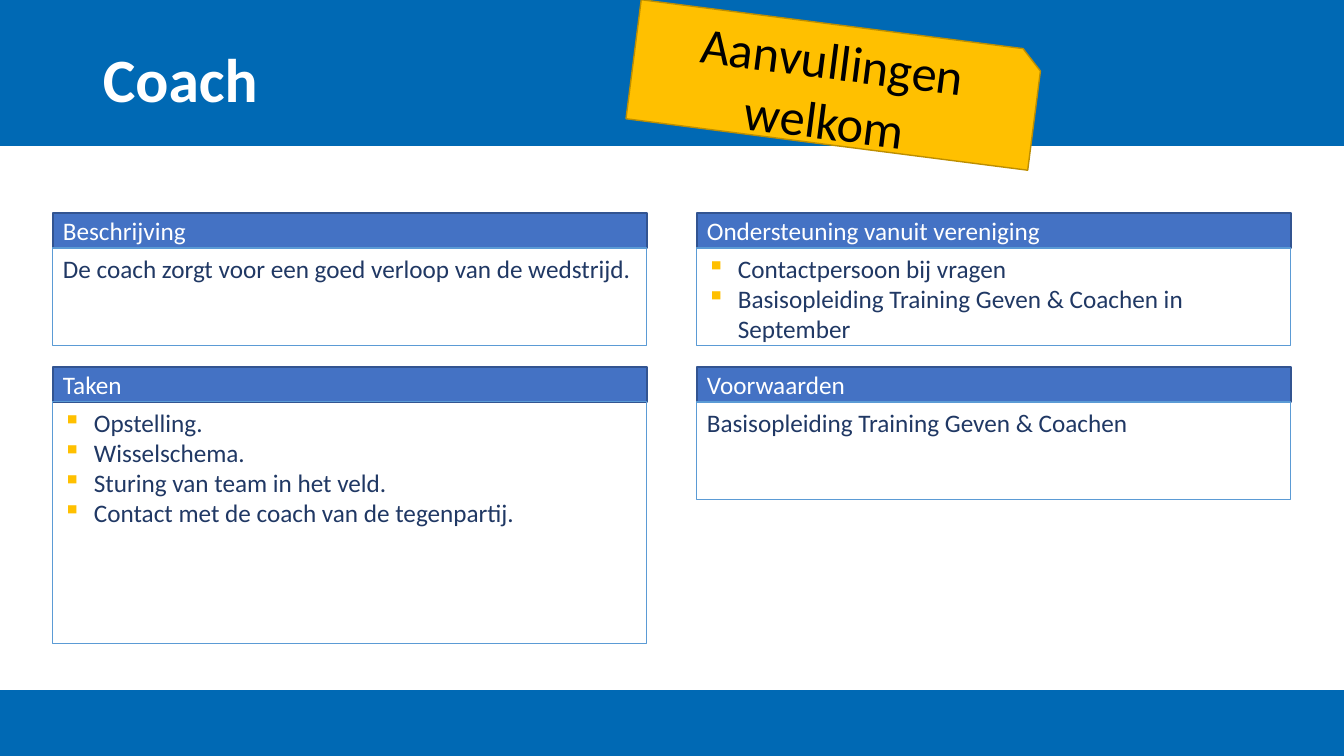
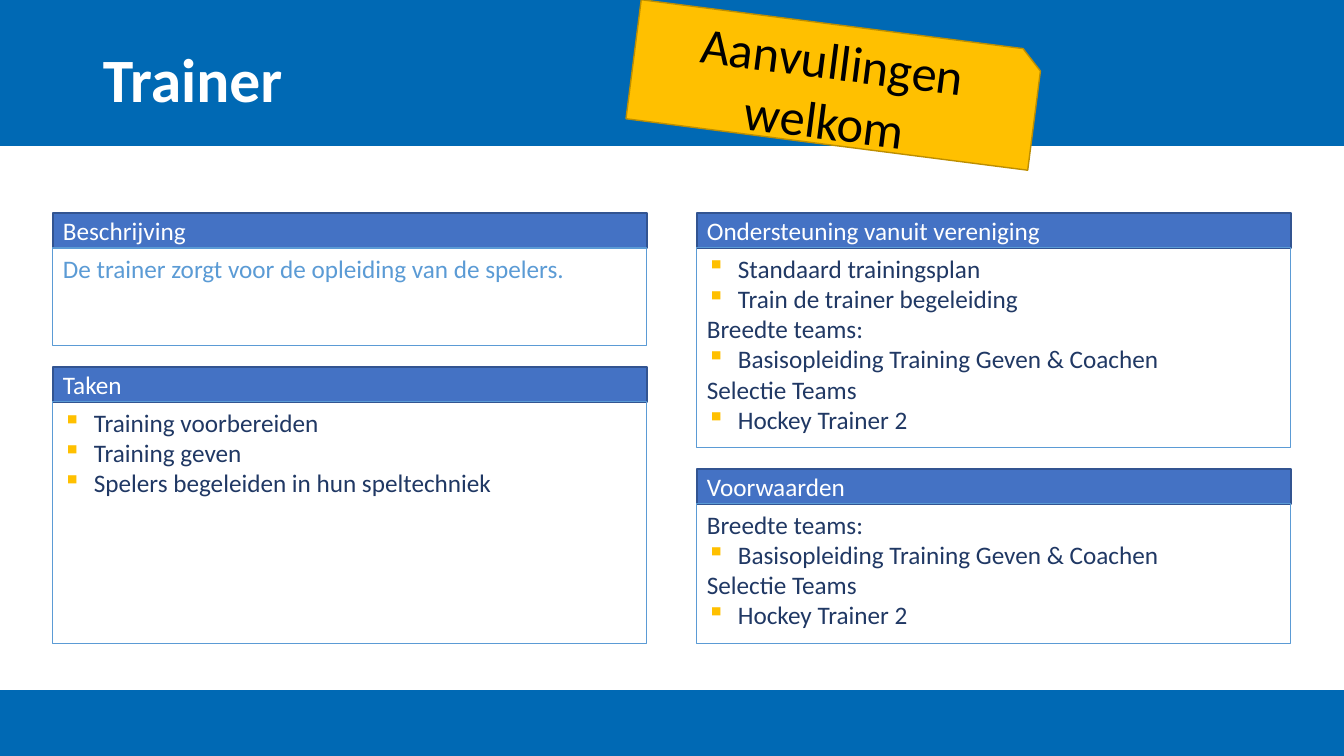
from collections import namedtuple
from dataclasses import dataclass

from lxml import etree
from pptx import Presentation
from pptx.dml.color import RGBColor
from pptx.enum.shapes import MSO_SHAPE
from pptx.enum.text import MSO_ANCHOR, PP_ALIGN
from pptx.oxml.ns import qn
from pptx.util import Emu, Pt

RECTANGLE = MSO_SHAPE.RECTANGLE
SNIPPED = MSO_SHAPE.SNIP_1_RECTANGLE
TOP, MIDDLE = MSO_ANCHOR.TOP, MSO_ANCHOR.MIDDLE
LEFT, CENTER = PP_ALIGN.LEFT, PP_ALIGN.CENTER

SLIDE_WIDTH, SLIDE_HEIGHT = 1344, 756
EMU_PER_PX = 12192000 / SLIDE_WIDTH

Box = namedtuple("Box", "left top width height")
Panel = namedtuple("Panel", "heading height lines color")


@dataclass(frozen=True)
class Theme:
    font: str = "Calibri"
    band: str = "0069B4"
    header: str = "4472C4"
    header_line: str = "325491"
    body_line: str = "5B9BD5"
    text: str = "203864"
    light_text: str = "5B9BD5"
    accent: str = "FFC000"
    accent_line: str = "BD8E00"
    white: str = "FFFFFF"
    black: str = "000000"
    title_size: int = 44
    badge_size: int = 36
    text_size: int = 18


THEME = Theme()
HEADER_BAND = Box(0, 0, SLIDE_WIDTH, 146)
FOOTER_BAND = Box(0, 690, SLIDE_WIDTH, 66)
TITLE_BOX = Box(93, 40, 1159, 86)
BADGE_BOX = Box(632, 25, 405, 120)
COLUMNS = (Box(53, 213, 594, 431), Box(697, 213, 594, 431))
PANEL_HEADER = 35
PANEL_GAP = 21
BULLET = "▪"
BULLET_INDENT = 31


def px(length):
    return Emu(round(length * EMU_PER_PX))


def rgb(value):
    return RGBColor.from_string(value)


def place(box):
    return [px(length) for length in box]


def add_box(slide, kind, box, fill=None, line=None, line_width=1):
    shape = slide.shapes.add_shape(kind, *place(box))
    shape.shadow.inherit = False
    if fill:
        shape.fill.solid()
        shape.fill.fore_color.rgb = rgb(fill)
    else:
        shape.fill.background()
    if line:
        shape.line.color.rgb = rgb(line)
        shape.line.width = Pt(line_width)
    else:
        shape.line.fill.background()
    return shape


def add_bullet(paragraph):
    properties = paragraph._p.get_or_add_pPr()
    indent = px(BULLET_INDENT)
    properties.set("marL", str(indent))
    properties.set("indent", str(-indent))
    color = etree.SubElement(properties, qn("a:buClr"))
    etree.SubElement(color, qn("a:srgbClr"), val=THEME.accent)
    etree.SubElement(properties, qn("a:buChar"), char=BULLET)


def write(shape, lines, size, color, anchor=MIDDLE, align=LEFT, bold=False):
    frame = shape.text_frame
    frame.word_wrap = True
    frame.vertical_anchor = anchor
    for index, line in enumerate(lines):
        paragraph = frame.paragraphs[0] if index == 0 else frame.add_paragraph()
        paragraph.alignment = align
        if line.startswith(BULLET):
            add_bullet(paragraph)
        run = paragraph.add_run()
        run.text = line.removeprefix(BULLET)
        run.font.name = THEME.font
        run.font.size = Pt(size)
        run.font.bold = bold
        run.font.color.rgb = rgb(color)


def add_frame(slide, title):
    for band in (HEADER_BAND, FOOTER_BAND):
        add_box(slide, RECTANGLE, band, THEME.band)
    title_box = slide.shapes.add_textbox(*place(TITLE_BOX))
    write(title_box, [title], THEME.title_size, THEME.white, bold=True)
    title_box.text_frame.paragraphs[0].line_spacing = 0.9


def add_badge(slide, box):
    badge = add_box(slide, SNIPPED, box, THEME.accent, THEME.accent_line)
    badge.rotation = 7.3
    write(badge, ["Aanvullingen welkom"], THEME.badge_size, THEME.black, align=CENTER)


def add_panel(slide, box, panel):
    header_box = box._replace(height=PANEL_HEADER)
    body_box = box._replace(top=box.top + PANEL_HEADER, height=box.height - PANEL_HEADER)
    header = add_box(slide, RECTANGLE, header_box, THEME.header, THEME.header_line)
    write(header, [panel.heading], THEME.text_size, THEME.white)
    body = add_box(slide, RECTANGLE, body_box, line=THEME.body_line, line_width=0.75)
    write(body, panel.lines, THEME.text_size, panel.color, anchor=TOP)


def add_column(slide, box, panels):
    top = box.top
    for panel in panels:
        add_panel(slide, box._replace(top=top, height=panel.height), panel)
        top += panel.height + PANEL_GAP


def add_role_slide(presentation, title, columns):
    slide = presentation.slides.add_slide(presentation.slide_layouts[6])
    add_frame(slide, title)
    for box, panels in zip(COLUMNS, columns):
        add_column(slide, box, panels)
    add_badge(slide, BADGE_BOX)


TEAM_COURSES = [
    "Breedte teams:",
    "▪Basisopleiding Training Geven & Coachen",
    "Selectie Teams",
    "▪Hockey Trainer 2",
]

ROLES = {
    "Coach": (
        [
            Panel("Beschrijving", 133,
                  ["De coach zorgt voor een goed verloop van de wedstrijd."], THEME.text),
            Panel("Taken", 277,
                  ["▪Opstelling.", "▪Wisselschema.", "▪Sturing van team in het veld.",
                   "▪Contact met de coach van de tegenpartij."], THEME.text),
        ],
        [
            Panel("Ondersteuning vanuit vereniging", 133,
                  ["▪Contactpersoon bij vragen",
                   "▪Basisopleiding Training Geven & Coachen in September"], THEME.text),
            Panel("Voorwaarden", 133,
                  ["Basisopleiding Training Geven & Coachen"], THEME.text),
        ],
    ),
    "Trainer": (
        [
            Panel("Beschrijving", 133,
                  ["De trainer zorgt voor de opleiding van de spelers."], THEME.light_text),
            Panel("Taken", 277,
                  ["▪Training voorbereiden", "▪Training geven",
                   "▪Spelers begeleiden in hun speltechniek"], THEME.text),
        ],
        [
            Panel("Ondersteuning vanuit vereniging", 235,
                  ["▪Standaard trainingsplan", "▪Train de trainer begeleiding",
                   *TEAM_COURSES], THEME.text),
            Panel("Voorwaarden", 175, TEAM_COURSES, THEME.text),
        ],
    ),
}


def main():
    presentation = Presentation()
    presentation.slide_width = px(SLIDE_WIDTH)
    presentation.slide_height = px(SLIDE_HEIGHT)
    for title, columns in ROLES.items():
        add_role_slide(presentation, title, columns)
    presentation.save("out.pptx")


if __name__ == "__main__":
    main()
